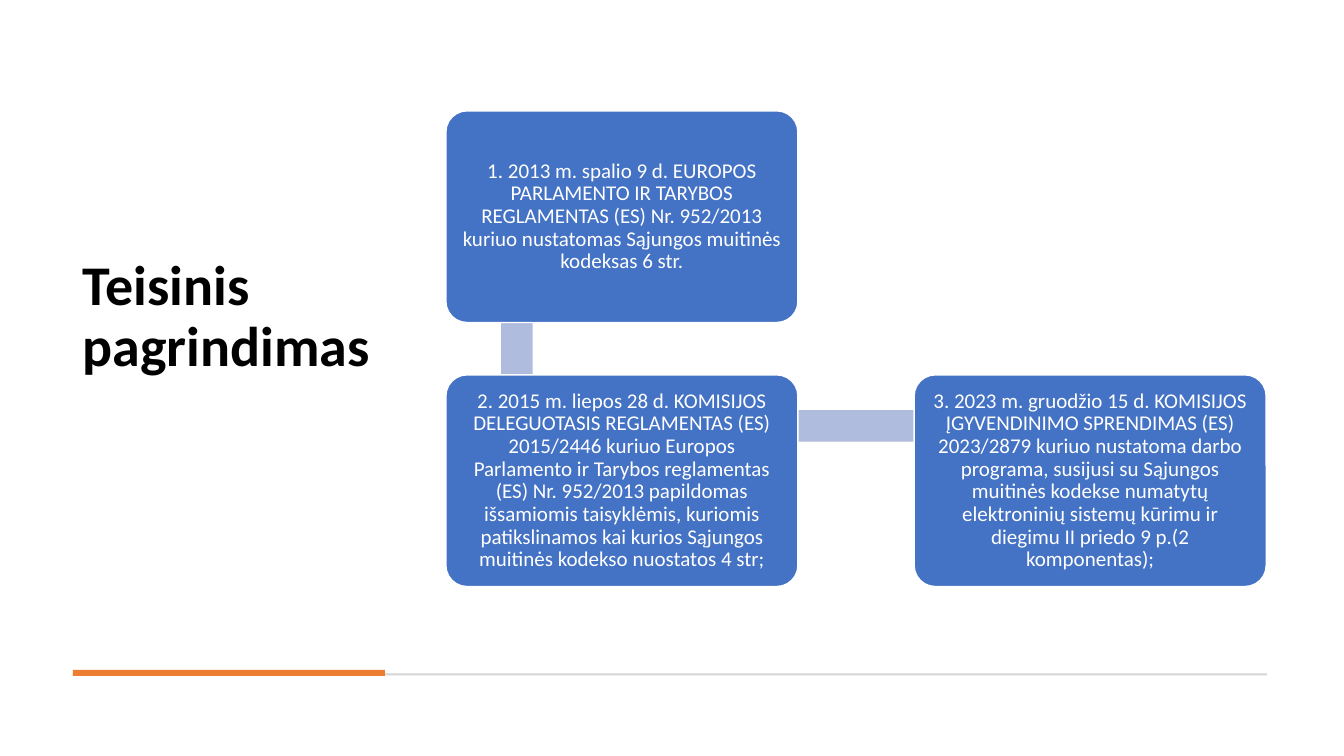
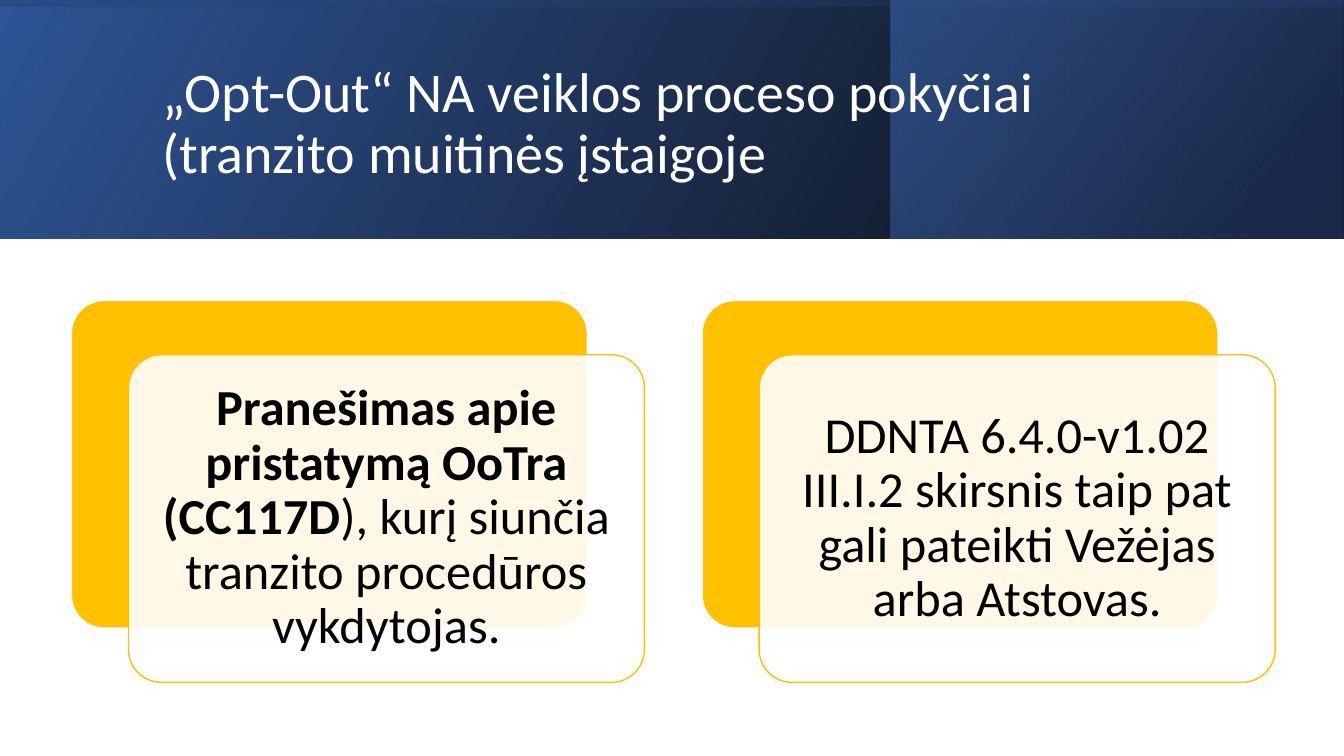
import pptx
import pptx.util
import pptx.dml.color
import pptx.enum.shapes
import pptx.enum.text
import pptx.oxml
import pptx.oxml.ns

Pt = pptx.util.Pt
RGB = pptx.dml.color.RGBColor
Kind = pptx.enum.shapes.MSO_SHAPE
Align = pptx.enum.text.PP_ALIGN
Mid = pptx.enum.text.MSO_ANCHOR.MIDDLE
NoFit = pptx.enum.text.MSO_AUTO_SIZE.NONE

WHITE = RGB(0xFF, 0xFF, 0xFF)
BLACK = RGB(0, 0, 0)
GREY = RGB(0xD5, 0xD5, 0xD5)
ORANGE = RGB(0xED, 0x7D, 0x31)
BLUE = RGB(0x44, 0x72, 0xC4)
PALE = RGB(0xB0, 0xBC, 0xDE)
GOLD = RGB(0xFF, 0xC0, 0x00)
DEEP = RGB(0x2F, 0x55, 0x97)
NAVY = RGB(0x20, 0x38, 0x64)


def put(item, vals):
    for key, val in vals.items():
        setattr(item, key, val)


def fade(node, pct):
    alpha = pptx.oxml.parse_xml(
        f'<a:alpha {pptx.oxml.ns.nsdecls("a")} val="{pct * 1000}"/>')
    node.append(alpha)


class Deck:
    font = "Calibri"
    lead = 0.9
    wide, high = 960, 540

    def __init__(self):
        self.file = pptx.Presentation()
        put(self.file, {"slide_width": Pt(self.wide),
                        "slide_height": Pt(self.high)})
        self.page = None

    def new(self):
        layout = self.file.slide_layouts.get_by_name("Title Only")
        self.page = self.file.slides.add_slide(layout)

    def text(self, frame, runs, size, color, align, pad):
        put(frame, {"word_wrap": True, "auto_size": NoFit,
                    "vertical_anchor": Mid})
        for side in ("left", "right", "top", "bottom"):
            setattr(frame, f"margin_{side}", Pt(pad))
        para = frame.paragraphs[0]
        put(para, {"alignment": align, "line_spacing": self.lead})
        for words, bold in runs:
            run = para.add_run()
            run.text = words
            put(run.font, {"name": self.font, "size": Pt(size), "bold": bold})
            run.font.color.rgb = color

    def title(self, words, box, color, bold=False):
        head = self.page.shapes.title
        put(head, dict(zip(("left", "top", "width", "height"), map(Pt, box))))
        self.text(head.text_frame, [(words, bold)], 40, color, Align.LEFT, 7.2)
        head.element.getparent().append(head.element)

    def shape(self, kind, box):
        item = self.page.shapes.add_shape(kind, *map(Pt, box))
        item.shadow.inherit = False
        item.line.fill.background()
        return item

    def bar(self, box, color):
        item = self.shape(Kind.RECTANGLE, box)
        item.fill.solid()
        item.fill.fore_color.rgb = color

    def band(self, box, stops, angle, turn=0):
        item = self.shape(Kind.RECTANGLE, box)
        item.rotation = turn
        item.element.spPr.xfrm.set("flipH", "1")
        item.fill.gradient()
        item.fill.gradient_angle = 360 - angle
        for stop, (place, color, _) in zip(item.fill.gradient_stops, stops):
            stop.color.rgb = color
            stop.position = place
        nodes = item.element.spPr.xpath(".//a:gs/a:srgbClr")
        for node, (_, _, pct) in zip(nodes, stops):
            fade(node, pct)

    def card(self, box, color, edge, runs=(), size=15, ink=WHITE, pad=4,
             pct=100):
        item = self.shape(Kind.ROUNDED_RECTANGLE, box)
        item.adjustments[0] = 0.1
        item.fill.solid()
        item.fill.fore_color.rgb = color
        if pct < 100:
            fade(item.element.spPr.xpath("./a:solidFill/a:srgbClr")[0], pct)
        item.line.color.rgb = edge
        item.line.width = Pt(1)
        if runs:
            self.text(item.text_frame, runs, size, ink, Align.CENTER, pad)


def legal(deck):
    deck.new()
    deck.title("Teisinis pagrindimas", (52, 12, 223, 430), BLACK, True)
    deck.bar((52, 481, 853, 1.5), GREY)
    deck.bar((52, 478.5, 223, 4.3), ORANGE)
    left, top, wide, high = 318.5, 79.2, 251.5, 151.2
    across, down, thick = 334.5, 188.6, 22.5
    deck.bar((358, top + high / 2, thick, down), PALE)
    deck.bar((left + wide / 2, 293, across, thick), PALE)
    acts = [
        (0, 0, "1. 2013 m. spalio 9 d. EUROPOS PARLAMENTO IR TARYBOS "
               "REGLAMENTAS (ES) Nr. 952/2013 kuriuo nustatomas Sąjungos "
               "muitinės kodeksas 6 str."),
        (0, 1, "2. 2015 m. liepos 28 d. KOMISIJOS DELEGUOTASIS REGLAMENTAS "
               "(ES) 2015/2446 kuriuo Europos Parlamento ir Tarybos "
               "reglamentas (ES) Nr. 952/2013 papildomas išsamiomis "
               "taisyklėmis, kuriomis patikslinamos kai kurios Sąjungos "
               "muitinės kodekso nuostatos 4 str;"),
        (1, 1, "3. 2023 m. gruodžio 15 d. KOMISIJOS ĮGYVENDINIMO SPRENDIMAS "
               "(ES) 2023/2879 kuriuo nustatoma darbo programa, susijusi su "
               "Sąjungos muitinės kodekse numatytų elektroninių sistemų "
               "kūrimu ir diegimu II priedo 9 p.(2 komponentas);"),
    ]
    for col, row, words in acts:
        box = (left + col * across, top + row * down, wide, high)
        deck.card(box, BLUE, WHITE, [(words, False)])


def change(deck):
    deck.new()
    tall = 170.6
    deck.band((0, 0, deck.wide, tall), [(0, BLACK, 96), (1, DEEP, 100)], 330)
    deck.band((636.5, 0, 322.8, tall),
              [(0.19, NAVY, 68), (1, BLUE, 48)], 320)
    mid = (deck.wide - tall) / 2
    deck.band((mid, -mid, tall, deck.wide),
              [(0.23, DEEP, 16), (0.99, BLACK, 45)], 350, 270)
    deck.title("„Opt-Out“ NA veiklos proceso pokyčiai "
               "(tranzito muitinės įstaigoje", (109, 27.4, 765, 123.8), WHITE)
    notes = [
        [("Pranešimas apie pristatymą OoTra (CC117D", True),
         ("), kurį siunčia tranzito procedūros vykdytojas.", False)],
        [("DDNTA 6.4.0-v1.02 III.I.2 skirsnis taip pat gali pateikti "
          "Vežėjas arba Atstovas.", False)],
    ]
    top, wide, high = 214.6, 368.5, 234
    for col, runs in enumerate(notes):
        left = 51 + col * 450.5
        deck.card((left, top, wide, high), GOLD, WHITE)
        deck.card((left + 40.8, top + 38.8, wide, high), WHITE, GOLD,
                  runs, 36, BLACK, 10.8, 90)


def main():
    deck = Deck()
    legal(deck)
    change(deck)
    deck.file.save("out.pptx")


if __name__ == "__main__":
    main()
